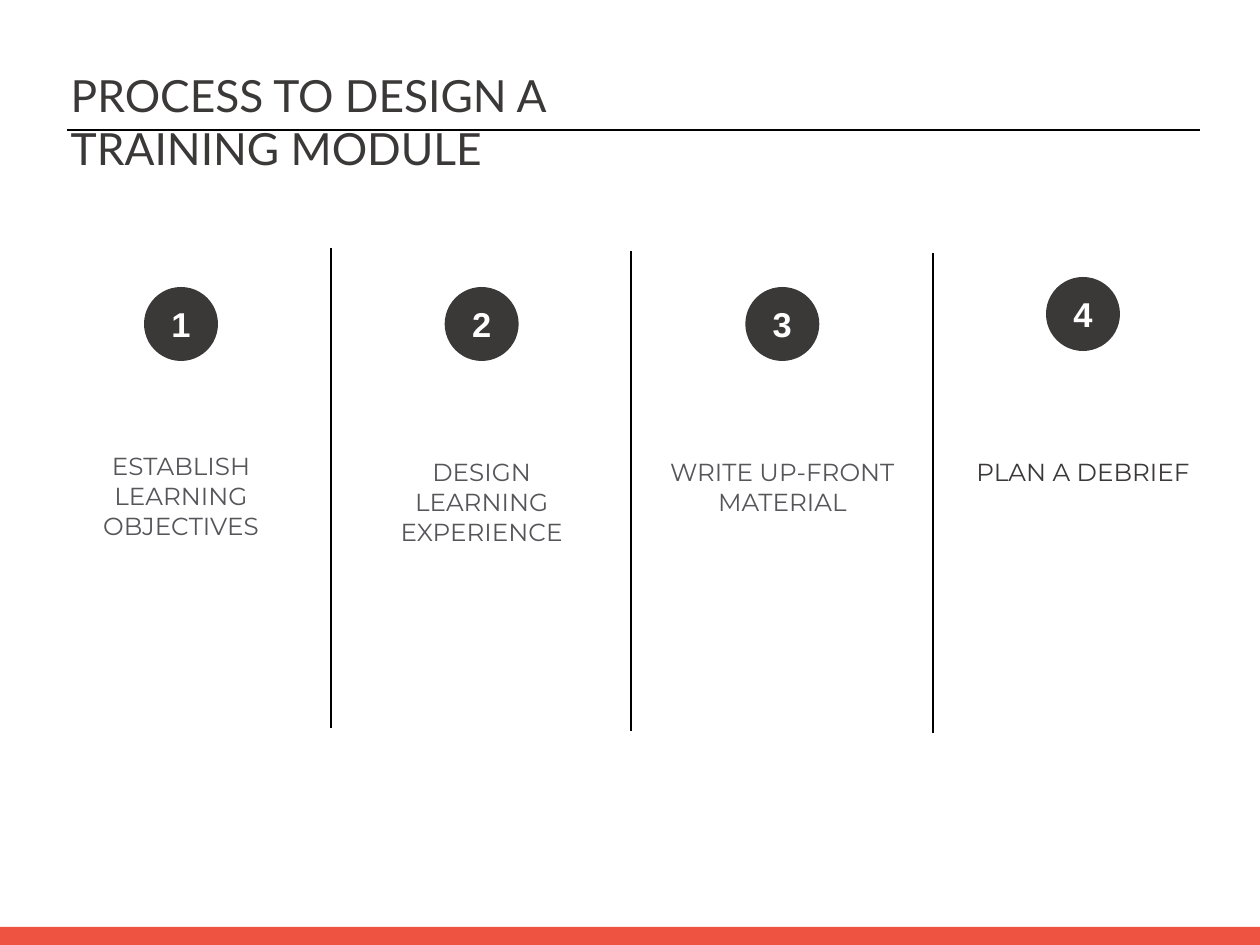
"""Build the slide on the process to design a training module."""
from pptx import Presentation
from pptx.dml.color import RGBColor
from pptx.enum.shapes import MSO_CONNECTOR as CONN, MSO_SHAPE as SHAPE
from pptx.enum.text import MSO_ANCHOR as ANCHOR, MSO_AUTO_SIZE as AUTO, PP_ALIGN as ALIGN
from pptx.oxml.xmlchemy import OxmlElement
from pptx.util import Pt

TITLE = "PROCESS TO DESIGN A TRAINING MODULE"
# text, label top, label width, label height, circle top, label colour
STEPS = [
    ("ESTABLISH LEARNING OBJECTIVES", 447, 240, 98, 287, "grey"),
    ("DESIGN LEARNING EXPERIENCE", 453, 240, 98, 287, "grey"),
    ("WRITE UP-FRONT MATERIAL", 453, 268, 68, 287, "grey"),
    ("PLAN A DEBRIEF", 453, 268, 39, 277, "dark"),
]
DIVIDERS = [(331, 248), (631, 251), (933, 253)]
COLORS = {"dark": "3B3838", "grey": "56565A", "accent": "ED5340",
          "line": "000000", "white": "FFFFFF"}

WIDTH, HEIGHT = 1260, 945
FIRST_CENTRE, LAST_CENTRE = 181, 1083
CIRCLE, DIVIDER, BAR = 74, 480, 18
EMU_PER_PX = 10320


def px(n):
    return round(n * EMU_PER_PX)


def rgb(name):
    return RGBColor.from_string(COLORS[name])


def add_shape(s, kind, box, color):
    sp = s.shapes.add_shape(kind, *map(px, box))
    sp.shadow.inherit = False
    sp.fill.solid()
    sp.fill.fore_color.rgb = rgb(color)
    sp.line.fill.background()
    return sp


def add_line(s, x1, y1, x2, y2):
    line = s.shapes.add_connector(CONN.STRAIGHT, *map(px, (x1, y1, x2, y2)))
    line.line.color.rgb = rgb("line")
    line.line.width = Pt(1)
    line._element.spPr.append(OxmlElement("a:effectLst"))


def write(sp, text, font, size, color, align=ALIGN.CENTER, bold=False):
    tf = sp.text_frame
    tf.text = text
    p = tf.paragraphs[0]
    p.alignment = align
    r = p.runs[0]
    r.font.name, r.font.size, r.font.bold = font, Pt(size), bold
    r.font.color.rgb = rgb(color)


def add_text(s, box, *style):
    sp = s.shapes.add_textbox(*map(px, box))
    sp.text_frame.word_wrap = True
    sp.text_frame.auto_size = AUTO.SHAPE_TO_FIT_TEXT
    write(sp, *style)


def main():
    prs = Presentation()
    prs.slide_width, prs.slide_height = px(WIDTH), px(HEIGHT)
    s = prs.slides.add_slide(prs.slide_layouts[6])

    add_shape(s, SHAPE.RECTANGLE, (0, HEIGHT - BAR, WIDTH, BAR), "accent")
    add_line(s, 67, 130, 1200, 130)
    for x, top in DIVIDERS:
        add_line(s, x, top + DIVIDER, x, top)
    add_text(s, (62, 64, 575, 63), TITLE, "Lato", 36, "dark", ALIGN.LEFT)

    pitch = (LAST_CENTRE - FIRST_CENTRE) / (len(STEPS) - 1)
    for i, (text, top, width, height, circle_top, color) in enumerate(STEPS):
        centre = FIRST_CENTRE + i * pitch
        circle = add_shape(s, SHAPE.OVAL,
                           (centre - CIRCLE / 2, circle_top, CIRCLE, CIRCLE), "dark")
        circle.text_frame.vertical_anchor = ANCHOR.MIDDLE
        write(circle, str(i + 1), "Arial", 28, "white", bold=True)
        add_text(s, (centre - width / 2, top, width, height),
                 text, "Montserrat", 20, color)

    prs.save("out.pptx")


if __name__ == "__main__":
    main()
